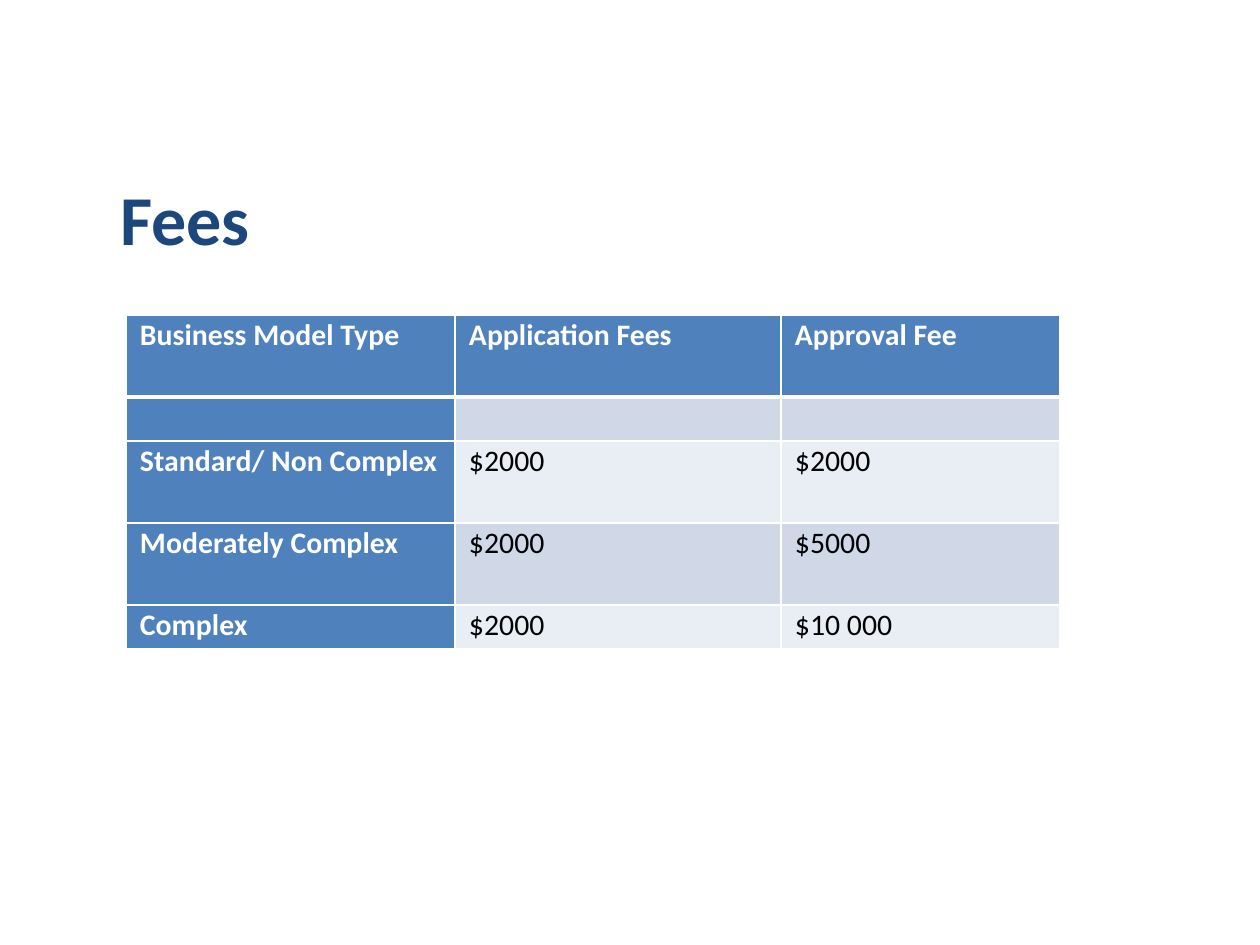
import lxml.etree
import pptx
import pptx.dml.color
import pptx.enum.text
import pptx.oxml.ns
import pptx.util

PX = 914400 // 126
COLORS = {"title": "1C477D", "header": "4F81BD", "band": "D0D8E8",
          "plain": "E9EDF4", "white": "FFFFFF", "black": "000000"}
COLS = [329, 326, 279]
ROWS = [82, 44, 82, 82, 44]
FEES = [
    ["Business Model Type", "Application Fees", "Approval Fee"],
    ["", "", ""],
    ["Standard/ Non Complex", "$2000", "$2000"],
    ["Moderately Complex", "$2000", "$5000"],
    ["Complex", "$2000", "$10 000"],
]


def style(p, size, color, bold):
    p.font.name = "Calibri"
    p.font.size = pptx.util.Pt(size)
    p.font.bold = bold
    p.font.color.rgb = pptx.dml.color.RGBColor.from_string(COLORS[color])


def set_borders(cell, widths):
    """Draw white borders; widths maps each side (L, R, T, B) to points."""
    tc_pr = cell._tc.get_or_add_tcPr()
    qn = pptx.oxml.ns.qn
    for i, (side, width) in enumerate(widths.items()):
        ln = lxml.etree.Element(qn(f"a:ln{side}"), w=str(pptx.util.Pt(width)))
        fill = lxml.etree.SubElement(ln, qn("a:solidFill"))
        lxml.etree.SubElement(fill, qn("a:srgbClr"), val=COLORS["white"])
        tc_pr.insert(i, ln)  # borders come before the fill


prs = pptx.Presentation()
prs.slide_width = 1260 * PX
prs.slide_height = 945 * PX
s = prs.slides.add_slide(prs.slide_layouts[6])

# Title
sp = s.shapes.add_textbox(21 * PX, 189 * PX, 328 * PX, 58 * PX)
tf = sp.text_frame
tf.word_wrap = True
tf.vertical_anchor = pptx.enum.text.MSO_ANCHOR.MIDDLE
p = tf.paragraphs[0]
p.text = "Fees"
p.alignment = pptx.enum.text.PP_ALIGN.CENTER
style(p, 40, "title", True)

# Fee table
table = s.shapes.add_table(len(ROWS), len(COLS), 126 * PX, 315 * PX,
                           sum(COLS) * PX, sum(ROWS) * PX).table
for column, width in zip(table.columns, COLS):
    column.width = width * PX
for row, height in zip(table.rows, ROWS):
    row.height = height * PX

for r, texts in enumerate(FEES):
    for c, text in enumerate(texts):
        cell = table.cell(r, c)
        heading = r == 0 or c == 0
        fill = "header" if heading else "band" if r % 2 else "plain"
        cell.fill.solid()
        cell.fill.fore_color.rgb = pptx.dml.color.RGBColor.from_string(COLORS[fill])
        cell.margin_left = cell.margin_right = 14 * PX
        cell.margin_top = cell.margin_bottom = 0
        set_borders(cell, {"L": 1, "R": 1, "T": 3 if r == 1 else 1, "B": 3 if r == 0 else 1})
        p = cell.text_frame.paragraphs[0]
        p.text = text
        p.alignment = pptx.enum.text.PP_ALIGN.JUSTIFY
        p.line_spacing = 1.07
        style(p, 17, "white" if heading else "black", heading)

prs.save("out.pptx")
